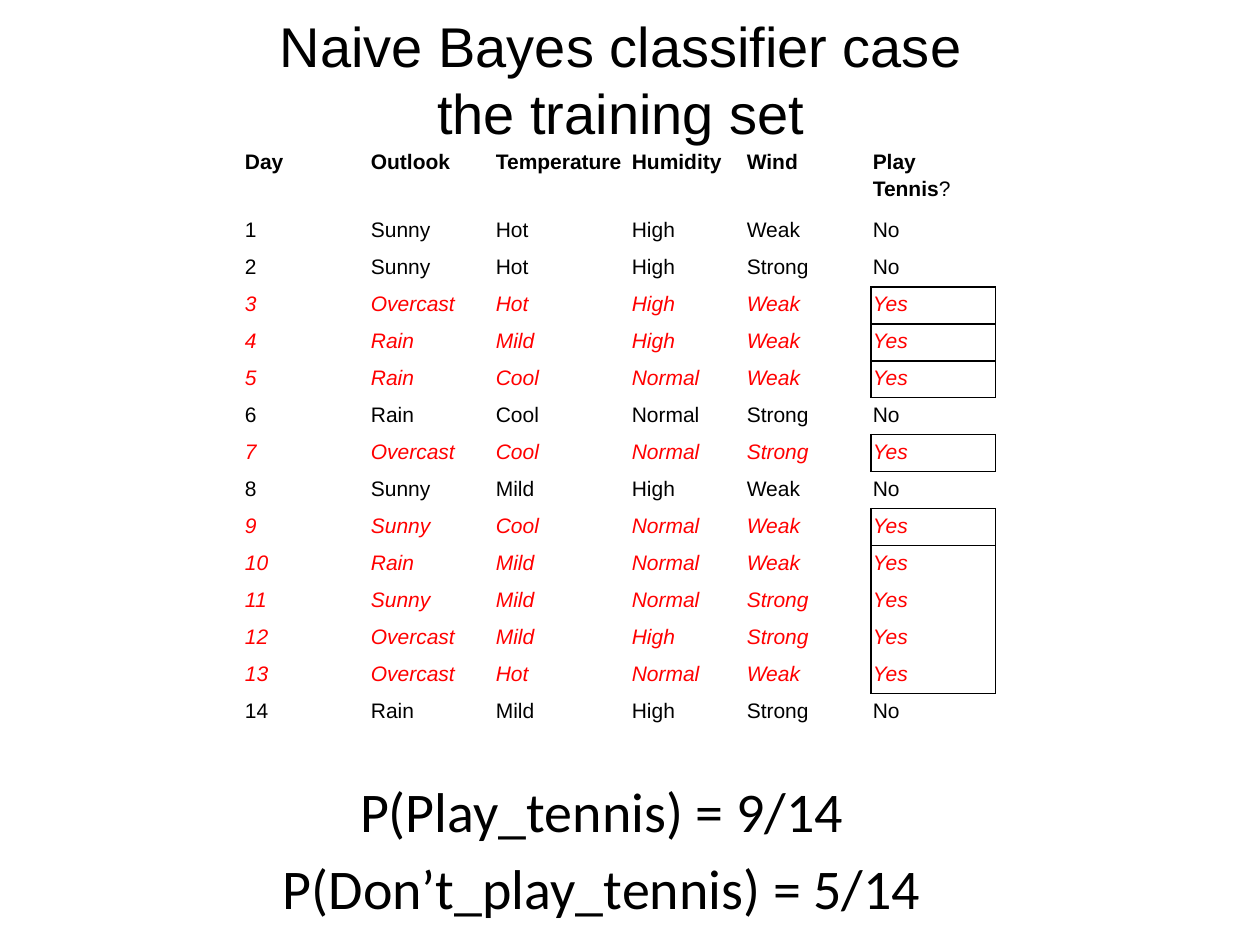
from collections import defaultdict

from lxml import etree
from pptx import Presentation
from pptx.dml.color import RGBColor
from pptx.enum.text import MSO_ANCHOR, PP_ALIGN
from pptx.oxml.ns import qn
from pptx.util import Emu, Pt

PX = 914400 // 126
CENTER = PP_ALIGN.CENTER
MIDDLE = MSO_ANCHOR.MIDDLE
TOP = MSO_ANCHOR.TOP
TITLE_ONLY = 5
NO_STYLE = "{2D5ABB26-0587-4C30-8999-92F81FD0307C}"
BLACK = "000000"
RED = "FF0000"

TITLE = ("Naive Bayes classifier case", "the training set")
HEADER = ("Day", "Outlook", "Temperature", "Humidity", "Wind", "Play Tennis?")
DAYS = (
    ("Sunny", "Hot", "High", "Weak", "No"),
    ("Sunny", "Hot", "High", "Strong", "No"),
    ("Overcast", "Hot", "High", "Weak", "Yes"),
    ("Rain", "Mild", "High", "Weak", "Yes"),
    ("Rain", "Cool", "Normal", "Weak", "Yes"),
    ("Rain", "Cool", "Normal", "Strong", "No"),
    ("Overcast", "Cool", "Normal", "Strong", "Yes"),
    ("Sunny", "Mild", "High", "Weak", "No"),
    ("Sunny", "Cool", "Normal", "Weak", "Yes"),
    ("Rain", "Mild", "Normal", "Weak", "Yes"),
    ("Sunny", "Mild", "Normal", "Strong", "Yes"),
    ("Overcast", "Mild", "High", "Strong", "Yes"),
    ("Overcast", "Hot", "Normal", "Weak", "Yes"),
    ("Rain", "Mild", "High", "Strong", "No"),
)
COLUMN_WIDTHS = (126, 125, 136, 115, 126, 125)
HEADER_HEIGHT = 68
DAY_HEIGHT = 37
OUTLINED_DAYS = ((3, 3), (4, 4), (5, 5), (7, 7), (9, 13))
PRIORS = ("P(Play_tennis) = 9/14", "P(Don’t_play_tennis) = 5/14")


def px(length):
    """Turn pixels into EMU."""
    return Emu(length * PX)


def rgb(color):
    """Turn a hex string into a colour."""
    return RGBColor.from_string(color)


def style_runs(para, font, size, color=BLACK, bold=False, italic=False):
    """Format every run of a paragraph."""
    for span in para.runs:
        span.font.name = font
        span.font.size = Pt(size)
        span.font.color.rgb = rgb(color)
        span.font.bold = bold
        span.font.italic = italic


def place_title(page, left, top, width, height):
    """Place the two-line title."""
    title = page.shapes.title
    title.left, title.top, title.width, title.height = map(px, (left, top, width, height))
    title.text_frame.vertical_anchor = MIDDLE
    para = title.text_frame.paragraphs[0]
    para.alignment = CENTER
    para.add_run().text = TITLE[0]
    para.add_line_break()
    para.add_run().text = TITLE[1]
    style_runs(para, "Arial", 32)


def outlined_edges(column):
    """Collect the black edges of each cell around the outlined days."""
    edges = defaultdict(set)
    for first, last in OUTLINED_DAYS:
        for row in range(first, last + 1):
            edges[row, column] |= {"L", "R"}
            edges[row, column - 1].add("R")
        edges[first, column].add("T")
        edges[first - 1, column].add("B")
        edges[last, column].add("B")
        edges[last + 1, column].add("T")
    return edges


def draw_edges(cell, sides):
    """Draw black one-point lines on the given sides of a cell."""
    properties = cell._tc.get_or_add_tcPr()
    for side in "LRTB":
        if side in sides:
            line = etree.SubElement(properties, qn(f"a:ln{side}"), w=str(Pt(1)))
            fill = etree.SubElement(line, qn("a:solidFill"))
            etree.SubElement(fill, qn("a:srgbClr"), val=BLACK)


def fill_cell(cell, text, sides, **style):
    """Write one table cell with its edges."""
    draw_edges(cell, sides)
    cell.fill.background()
    cell.margin_left = cell.margin_right = px(2)
    cell.margin_top = cell.margin_bottom = px(2)
    cell.vertical_anchor = TOP
    para = cell.text_frame.paragraphs[0]
    for part in text.partition("?")[:2]:
        if part:
            para.add_run().text = part
    para.line_spacing = 1.15
    style_runs(para, "Arial", 12, **style)
    if text.endswith("?"):
        para.runs[-1].font.bold = False


def place_training_table(page, left, top):
    """Place the table of training days."""
    rows = [HEADER] + [(str(day), *values) for day, values in enumerate(DAYS, 1)]
    heights = [HEADER_HEIGHT] + [DAY_HEIGHT] * len(DAYS)
    box = map(px, (left, top, sum(COLUMN_WIDTHS), sum(heights)))
    frame = page.shapes.add_table(len(rows), len(HEADER), *box)
    table = frame.table
    table.first_row = table.horz_banding = False
    next(frame.element.iter(qn("a:tableStyleId"))).text = NO_STYLE
    for column, width in zip(table.columns, COLUMN_WIDTHS):
        column.width = px(width)
    edges = outlined_edges(len(HEADER) - 1)
    for row, (values, height) in enumerate(zip(rows, heights)):
        table.rows[row].height = px(height)
        plays = values[-1] == "Yes"
        for column, text in enumerate(values):
            fill_cell(table.cell(row, column), text, edges[row, column],
                      color=RED if plays else BLACK, bold=row == 0, italic=plays)


def place_priors(page, left, top, width, height):
    """Place the two prior probabilities."""
    box = page.shapes.add_textbox(*map(px, (left, top, width, height)))
    box.text_frame.word_wrap = True
    box.text_frame.text = "\n".join(PRIORS)
    for para in box.text_frame.paragraphs:
        para.alignment = CENTER
        para.space_before = Pt(6)
        style_runs(para, "Calibri", 32)


def main():
    """Build and save the slide."""
    deck = Presentation()
    deck.slide_width, deck.slide_height = px(1260), px(945)
    page = deck.slides.add_slide(deck.slide_layouts[TITLE_ONLY])
    place_title(page, 54, 0, 1134, 158)
    place_training_table(page, 243, 145)
    place_priors(page, 35, 770, 1134, 159)
    deck.save("out.pptx")


if __name__ == "__main__":
    main()
